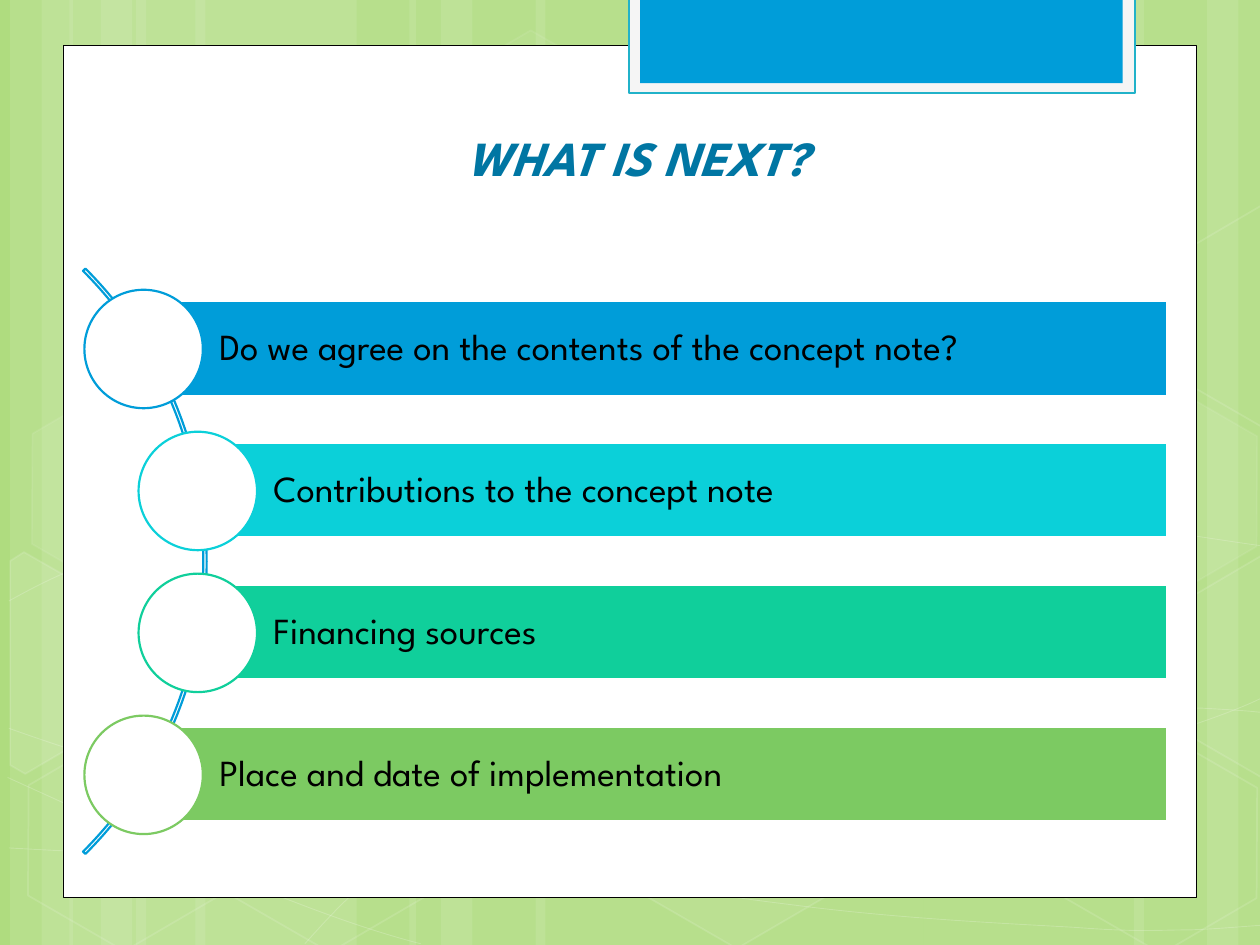
from math import cos, radians, sin

from lxml.etree import SubElement
from pptx import Presentation
from pptx.dml.color import RGBColor
from pptx.enum.shapes import MSO_SHAPE as Preset
from pptx.enum.text import MSO_ANCHOR as Anchor, PP_ALIGN as Align
from pptx.oxml.ns import qn
from pptx.util import Inches, Pt

FONT = "League Spartan"
COLORS = {
    "backdrop": "92D050", "white": "FFFFFF", "black": "000000",
    "tab": "F5F5F5", "tab_edge": "21B2C9", "title": "0076A3",
    "blue": "009DD9", "cyan": "0BD0D9", "teal": "10CF9B", "green": "7CCA62",
}

# Left edge and width of the pale stripes
STRIPE_SET = [(1.08, 1.75), (0.08, 0.5), (0.33, 0.83)]
STRIPES = (STRIPE_SET + [(left + 0.47, width) for left, width in STRIPE_SET]
           + [(7.33, 1.75), (9.58, 0.5), (9, 0.83), (4.25, 3.08), (3.25, 0.5), (3.5, 0.83)])

# Start point, then Bezier segments of two controls and an end point
WAVES = [
    [(0.07, 6.73), (0.61, 6.76), (1.15, 6.79), (1.9, 6.78), (2.65, 6.77), (3.58, 6.75),
     (4.58, 6.65), (5.58, 6.55), (7, 6.36), (7.92, 6.17), (8.83, 5.98), (9.77, 5.68), (10.07, 5.51)],
    [(0.07, 4.77), (0.36, 4.61), (0.65, 4.46), (1.21, 4.31), (1.78, 4.16), (2.59, 3.94),
     (3.47, 3.87), (4.36, 3.8), (5.44, 3.79), (6.54, 3.87), (7.64, 3.95), (9.47, 4.26), (10.07, 4.34)],
    [(0.06, 6.17), (1.27, 6.72), (2.47, 7.27), (3.34, 7.49)],
    [(0.07, 5.78), (0.38, 5.89), (0.7, 6), (1.28, 6.16), (1.86, 6.31), (2.73, 6.56),
     (3.57, 6.73), (4.4, 6.9), (5.45, 7.08), (6.28, 7.18), (7.11, 7.29), (8, 7.33),
     (8.53, 7.36), (9.05, 7.4), (9.19, 7.38), (9.45, 7.38), (9.71, 7.37), (9.89, 7.35), (10.07, 7.34)],
    [(2.42, 7.49), (2.6, 7.29), (2.78, 7.09), (3.02, 6.91), (3.26, 6.73), (3.6, 6.53),
     (3.88, 6.39), (4.16, 6.25), (4.33, 6.19), (4.7, 6.09), (5.06, 5.99), (5.73, 5.85),
     (6.08, 5.78), (6.44, 5.71), (6.49, 5.71), (6.8, 5.69), (7.11, 5.66), (7.6, 5.63),
     (7.94, 5.62), (8.29, 5.61), (8.86, 5.62), (8.86, 5.62), (9.08, 5.62), (9.31, 5.62),
     (9.53, 5.62), (9.71, 5.63), (9.88, 5.64), (9.97, 5.65), (10.06, 5.66), (10.03, 5.65), (10.06, 5.66)],
]

# Left, top, fill opacity, line opacity (percent)
HEXAGONS = [
    (3.34, 0.36, 4, 8), (4.97, 5.89, 6, 12), (0.11, 5.91, 0, 12),
    (0.14, 3.12, 7, 8), (1.74, 5.92, 0, 12), (7.53, 4.53, 10, 12),
    (8.34, 5.93, 0, 12), (8.34, 3.14, 7, 8),
]
TILT = 30

# Hexagons cut off by the slide edge: corners as they lie, centre, fill opacity
CUT_HEXAGONS = [
    ([(0.08, 4.45), (0.19, 4.38), (0.96, 4.82), (0.95, 5.7), (0.2, 6.14), (0.08, 6.07)], (0.36, 5.35), 10),
    ([(9.26, 4.85), (10.01, 4.41), (10.09, 4.46), (10.09, 6.13), (10.02, 6.17), (9.26, 5.73)], (9.85, 5.2), 4),
    ([(9.26, 2.07), (10.01, 1.63), (10.1, 1.68), (10.09, 3.35), (10.02, 3.39), (9.26, 2.95)], (9.85, 2.41), 0),
]

# Wording, colour, left edge of the bar
STEPS = [
    ("Do we agree on the contents of the concept note?", "blue", 1.14),
    ("Contributions to the concept note", "cyan", 1.57),
    ("Financing sources", "teal", 1.57),
    ("Place and date of implementation", "green", 1.14),
]
FIRST_TOP, LAST_TOP, BAR_RIGHT = 2.39, 5.77, 9.26


def paint(fill, color, opacity=100):
    if not color or not opacity:
        fill.background()
        return
    fill.solid()
    fill.fore_color.rgb = RGBColor.from_string(COLORS[color])
    if opacity < 100:
        tint = fill._xPr.find(".//" + qn("a:srgbClr"))
        SubElement(tint, qn("a:alpha")).set("val", str(opacity * 1000))


def style(shape, fill=None, line=None, weight=1.25, fill_opacity=100, line_opacity=100):
    shape.shadow.inherit = False
    paint(shape.fill, fill, fill_opacity)
    paint(shape.line.fill, line, line_opacity)
    if line:
        shape.line.width = Pt(weight)
    return shape


def add_preset(page, preset, left, top, width, height, **look):
    shape = page.shapes.add_shape(preset, Inches(left), Inches(top), Inches(width), Inches(height))
    return style(shape, **look)


def add_outline(page, points, close, **look):
    start, *rest = [(Inches(x), Inches(y)) for x, y in points]
    builder = page.shapes.build_freeform(*start)
    builder.add_line_segments(rest, close=close)
    return style(builder.convert_to_shape(), **look)


def add_wave(page, nodes):
    wave = add_outline(page, nodes, False, line="white", weight=0.5, line_opacity=20)
    # Join every three straight segments into one Bezier segment
    outline = wave._element.find(".//" + qn("a:path"))
    segments = outline.findall(qn("a:lnTo"))
    for i in range(0, len(segments), 3):
        curve = SubElement(outline, qn("a:cubicBezTo"))
        for segment in segments[i:i + 3]:
            curve.append(segment[0])
            outline.remove(segment)


def turn_back(point, centre):
    dx, dy = point[0] - centre[0], point[1] - centre[1]
    c, s = cos(radians(TILT)), sin(radians(TILT))
    return centre[0] + dx * c + dy * s, centre[1] - dx * s + dy * c


def write(shape, text, frame_format, para_format, font_format, color):
    frame = shape.text_frame
    para = frame.paragraphs[0]
    span = para.add_run()
    span.text = text
    for target, values in ((frame, frame_format), (para, para_format), (span.font, font_format)):
        for name, value in values.items():
            setattr(target, name, value)
    span.font.name = FONT
    span.font.color.rgb = RGBColor.from_string(COLORS[color])


def add_backdrop(page):
    paint(page.background.fill, "backdrop", 73)
    for left, width in STRIPES:
        add_preset(page, Preset.RECTANGLE, left, 0, width, 7.5, fill="white", fill_opacity=10)
    for nodes in WAVES:
        add_wave(page, nodes)
    for left, top, fill_opacity, line_opacity in HEXAGONS:
        hexagon = add_preset(page, Preset.HEXAGON, left, top, 1.75, 1.52, fill="white", line="white",
                             weight=1, fill_opacity=fill_opacity, line_opacity=line_opacity)
        hexagon.adjustments[0] = 0.285
        hexagon.rotation = TILT
    for corners, centre, opacity in CUT_HEXAGONS:
        level = [turn_back(corner, centre) for corner in corners]
        part = add_outline(page, level, True, fill="white", line="white", weight=1,
                           fill_opacity=opacity, line_opacity=12)
        part.rotation = TILT


def add_panel(page):
    add_preset(page, Preset.RECTANGLE, 0.5, 0.36, 9, 6.76, fill="white", line="black", weight=0.5)
    add_preset(page, Preset.RECTANGLE, 4.99, -0.02, 4.02, 0.76, fill="tab", line="tab_edge")
    add_preset(page, Preset.RECTANGLE, 5.08, -0.02, 3.83, 0.68, fill="blue")


def add_title(page):
    box = page.shapes.add_textbox(Inches(1.22), Inches(0.96), Inches(7.68), Inches(0.57))
    write(box, "WHAT IS NEXT?",
          {"word_wrap": True, "vertical_anchor": Anchor.BOTTOM},
          {"alignment": Align.CENTER},
          {"size": Pt(28), "bold": True, "italic": True}, "title")


def add_step(page, top, text, color, left):
    bar = add_preset(page, Preset.RECTANGLE, left, top, BAR_RIGHT - left, 0.75, fill=color, line="white")
    inset = Inches(0.06)
    write(bar, text,
          {"word_wrap": True, "vertical_anchor": Anchor.MIDDLE, "margin_left": Inches(0.6),
           "margin_top": inset, "margin_right": inset, "margin_bottom": inset},
          {"alignment": Align.LEFT, "line_spacing": 0.9},
          {"size": Pt(21)}, "black")
    add_preset(page, Preset.OVAL, left - 0.47, top - 0.09, 0.94, 0.94, fill="white", line=color)


def main():
    deck = Presentation()
    deck.slide_width, deck.slide_height = Inches(10), Inches(7.5)
    page = deck.slides.add_slide(deck.slide_layouts[6])
    add_backdrop(page)
    add_panel(page)
    add_title(page)
    # Arc that the steps sit on
    arc = add_preset(page, Preset.BLOCK_ARC, -4.93, 1.17, 6.57, 6.57, line="blue")
    for i, value in enumerate((189, 27, 0.004)):
        arc.adjustments[i] = value
    pitch = (LAST_TOP - FIRST_TOP) / (len(STEPS) - 1)
    for i, step in enumerate(STEPS):
        add_step(page, FIRST_TOP + i * pitch, *step)
    deck.save("out.pptx")


if __name__ == "__main__":
    main()
